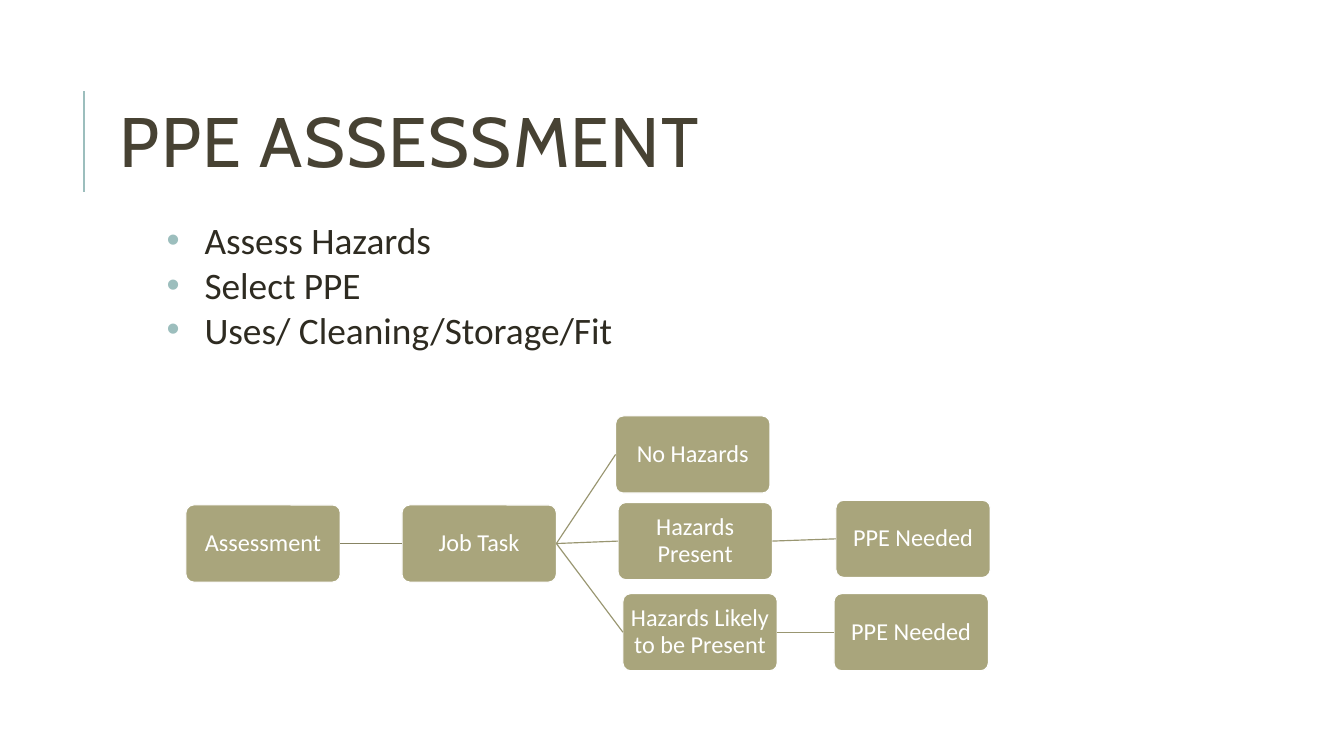
from dataclasses import dataclass

import lxml.etree
import pptx
import pptx.dml.color
import pptx.enum.shapes
import pptx.enum.text
import pptx.oxml.ns
import pptx.util

Pt = pptx.util.Pt
qualified = pptx.oxml.ns.qn
ALIGN = pptx.enum.text.PP_ALIGN
ANCHOR = pptx.enum.text.MSO_ANCHOR

# Colours
TEAL = "9CBEBD"
TITLE_BROWN = "474233"
BODY_BROWN = "2E2B21"
OLIVE = "A9A57C"
DARK_OLIVE = "878463"
LINK_OLIVE = "999671"
WHITE = "FFFFFF"

# Every box of the flow has the same size, in points
BOX_WIDTH, BOX_HEIGHT = 165.4, 82.7
LEFT_SITE, RIGHT_SITE = 1, 3


@dataclass
class Box:
    name: str
    text: str
    left: float
    top: float


@dataclass
class Link:
    start: str
    end: str
    color: str = LINK_OLIVE


BOXES = [
    Box("assessment", "Assessment", 199.2, 541),
    Box("task", "Job Task", 430.7, 541),
    Box("none", "No Hazards", 659.6, 445.6),
    Box("present", "Hazards Present", 662.2, 538.4),
    Box("likely", "Hazards Likely to be Present", 667.4, 636),
    Box("present_ppe", "PPE Needed", 895.6, 536),
    Box("likely_ppe", "PPE Needed", 893.6, 636),
]
LINKS = [
    Link("assessment", "task", DARK_OLIVE),
    Link("task", "none"),
    Link("task", "present"),
    Link("task", "likely"),
    Link("present", "present_ppe"),
    Link("likely", "likely_ppe"),
]
BULLETS = ["Assess Hazards", "Select PPE", "Uses/ Cleaning/Storage/Fit"]


def rgb(color: str) -> pptx.dml.color.RGBColor:
    return pptx.dml.color.RGBColor.from_string(color)


def write_text(shape, text: str, *, size: float, color: str, font="Calibri",
               align=ALIGN.LEFT, anchor=ANCHOR.MIDDLE, inset=3.6,
               line_spacing=1.0, level=0, letter_spacing=0) -> None:
    """Fill a shape with text, one paragraph for each line."""
    frame = shape.text_frame
    frame.word_wrap = True
    frame.auto_size = pptx.enum.text.MSO_AUTO_SIZE.NONE
    frame.vertical_anchor = anchor
    frame.margin_left = frame.margin_right = Pt(inset)
    frame.margin_top = frame.margin_bottom = Pt(min(inset, 3.6))
    frame.text = text
    for paragraph in frame.paragraphs:
        paragraph.alignment = align
        paragraph.level = level
        paragraph.line_spacing = line_spacing
        paragraph.space_before = paragraph.space_after = Pt(0)
        for run in paragraph.runs:
            run.font.name = font
            run.font.size = Pt(size)
            run.font.bold = False
            run.font.color.rgb = rgb(color)
            if letter_spacing:
                run.font._element.set("spc", str(int(letter_spacing * 100)))


def add_bullet(paragraph, color: str, *, margin: float, hanging: float) -> None:
    properties = paragraph._p.get_or_add_pPr()
    properties.set("marL", str(Pt(margin)))
    properties.set("indent", str(-Pt(hanging)))
    bullet_color = lxml.etree.SubElement(properties, qualified("a:buClr"))
    lxml.etree.SubElement(bullet_color, qualified("a:srgbClr"), val=color)
    lxml.etree.SubElement(properties, qualified("a:buFont"), typeface="Arial")
    lxml.etree.SubElement(properties, qualified("a:buChar"), char="•")


def place(shape, left: float, top: float, width: float, height: float) -> None:
    shape.left, shape.top = Pt(left), Pt(top)
    shape.width, shape.height = Pt(width), Pt(height)


def add_line(slide, color: str, width: float, start=(0, 0), end=(0, 0)):
    line = slide.shapes.add_connector(
        pptx.enum.shapes.MSO_CONNECTOR.STRAIGHT, *map(Pt, (*start, *end)))
    line.line.color.rgb = rgb(color)
    line.line.width = Pt(width)
    lxml.etree.SubElement(line._element.spPr, qualified("a:effectLst"))
    return line


def add_box(slide, box: Box):
    shape = slide.shapes.add_shape(
        pptx.enum.shapes.MSO_SHAPE.ROUNDED_RECTANGLE,
        Pt(box.left), Pt(box.top), Pt(BOX_WIDTH), Pt(BOX_HEIGHT))
    shape.adjustments[0] = 0.1
    shape.shadow.inherit = False
    shape.fill.solid()
    shape.fill.fore_color.rgb = rgb(OLIVE)
    shape.line.color.rgb = rgb(WHITE)
    shape.line.width = Pt(1.25)
    write_text(shape, box.text, size=26, color=WHITE, align=ALIGN.CENTER,
               line_spacing=0.9)
    return shape


def add_link(slide, link: Link, shapes: dict) -> None:
    line = add_line(slide, link.color, 1.25)
    line.begin_connect(shapes[link.start], RIGHT_SITE)
    line.end_connect(shapes[link.end], LEFT_SITE)


def main() -> None:
    presentation = pptx.Presentation()
    presentation.slide_width, presentation.slide_height = Pt(1440), Pt(810)
    slide = presentation.slides.add_slide(presentation.slide_layouts[1])

    # Title with its accent line
    add_line(slide, TEAL, 1.5, (90, 98), (90, 206))
    title = slide.shapes.title
    place(title, 121, 69, 1148, 177)
    write_text(title, "PPE ASSESSMENT", size=75, color=TITLE_BROWN,
               font="Cabin", inset=7.2, line_spacing=0.8, letter_spacing=1.5)

    # Bulleted list
    body = slide.placeholders[1]
    place(body, 121, 229, 1148, 475)
    write_text(body, "\n".join(BULLETS), size=40, color=BODY_BROWN,
               anchor=ANCHOR.TOP, level=1)
    for paragraph in body.text_frame.paragraphs:
        add_bullet(paragraph, TEAL, margin=94.5, hanging=40.5)

    # Assessment flow
    shapes = {box.name: add_box(slide, box) for box in BOXES}
    for link in LINKS:
        add_link(slide, link, shapes)

    presentation.save("out.pptx")


if __name__ == "__main__":
    main()
